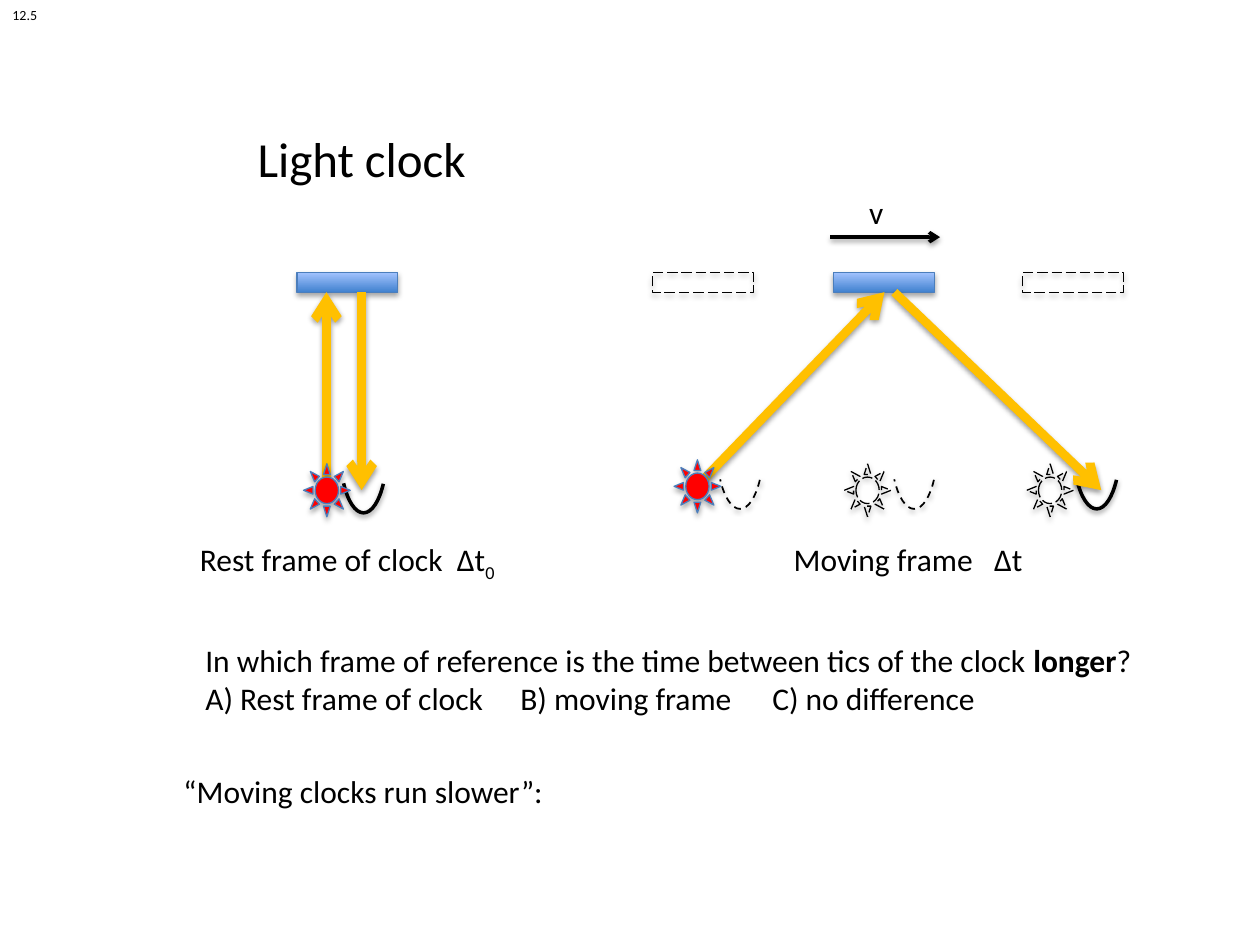
"""Build a slide comparing a light clock at rest with one in motion."""
from dataclasses import dataclass

from lxml import etree
from pptx import Presentation
from pptx.dml.color import RGBColor
from pptx.enum.dml import MSO_LINE
from pptx.enum.shapes import MSO_CONNECTOR, MSO_SHAPE
from pptx.enum.text import MSO_ANCHOR, MSO_AUTO_SIZE, PP_ALIGN
from pptx.oxml.ns import qn
from pptx.util import Cm, Pt

RECT, ARC, SUN = MSO_SHAPE.RECTANGLE, MSO_SHAPE.ARC, MSO_SHAPE.SUN
DASH, LONG = MSO_LINE.DASH, MSO_LINE.LONG_DASH
LINE = MSO_CONNECTOR.STRAIGHT
MID, TOP = MSO_ANCHOR.MIDDLE, MSO_ANCHOR.TOP
FIT, FIXED = MSO_AUTO_SIZE.SHAPE_TO_FIT_TEXT, MSO_AUTO_SIZE.NONE
LEFT, CENTER = PP_ALIGN.LEFT, PP_ALIGN.CENTER


@dataclass(frozen=True)
class Theme:
    font: str = "Calibri"
    black: RGBColor = RGBColor(0, 0, 0)
    gold: RGBColor = RGBColor(0xFF, 0xC0, 0x00)
    red: RGBColor = RGBColor(0xFF, 0x00, 0x00)
    edge: RGBColor = RGBColor(0x4B, 0x7E, 0xBC)
    deep: RGBColor = RGBColor(0x3F, 0x80, 0xCE)
    pale: RGBColor = RGBColor(0xA4, 0xC4, 0xFF)
    head: int = 28
    body: int = 18
    small: int = 8


theme = Theme()
deck = Presentation()
deck.slide_width, deck.slide_height = Cm(25.4), Cm(19.05)
slide = deck.slides.add_slide(deck.slide_layouts[6])
shapes = slide.shapes


def finish(item, color, width, dash=None, alpha=35, drop=1.8):
    item.line.color.rgb = color
    item.line.width = Pt(width)
    if dash:
        item.line.dash_style = dash
    props = item._element.spPr
    glow = etree.SubElement(props, qn("a:effectLst"))
    shade = etree.SubElement(
        glow, qn("a:outerShdw"), blurRad=str(Pt(3.1)), dist=str(Pt(drop)),
        dir="5400000", rotWithShape="0")
    tint = etree.SubElement(shade, qn("a:srgbClr"), val=str(theme.black))
    etree.SubElement(tint, qn("a:alpha"), val=str(alpha * 1000))


def write(box, paras, size=theme.body, align=LEFT, anchor=TOP, fit=FIT, wrap=False):
    frame = shapes.add_textbox(*map(Cm, box)).text_frame
    frame.word_wrap, frame.auto_size, frame.vertical_anchor = wrap, fit, anchor
    for i, runs in enumerate(paras):
        para = frame.add_paragraph() if i else frame.paragraphs[0]
        para.alignment = align
        for text, style in runs:
            run = para.add_run()
            run.text = text
            run.font.name, run.font.size = theme.font, Pt(size)
            run.font.color.rgb = theme.black
            run.font.bold = style == "bold"
            if style == "sub":
                run._r.get_or_add_rPr().set("baseline", "-25000")


write((4.93, 1.6, 4.72, 3.18), [[("Light clock", "")]], theme.head, CENTER, MID, FIXED)

for x, solid in ((5.99, True), (16.81, True), (13.16, False), (20.62, False)):
    plate = shapes.add_shape(RECT, Cm(x), Cm(5.49), Cm(2.03), Cm(0.41))
    if solid:
        plate.fill.gradient()
        plate.fill.gradient_angle = 90
        for stop, pos, color in zip(
                plate.fill.gradient_stops, (0, 1), (theme.deep, theme.pale)):
            stop.position, stop.color.rgb = pos, color
        finish(plate, theme.edge, 0.75)
    else:
        plate.fill.background()
        finish(plate, theme.black, 0.75, LONG)

for x, y, width, dash in (
        (6.86, 7.85, 2, None), (21.64, 7.77, 2, None),
        (17.96, 7.77, 1, DASH), (14.45, 7.77, 1, DASH)):
    dish = shapes.add_shape(ARC, Cm(x), Cm(y), Cm(0.94), Cm(2.49))
    dish.adjustments[0], dish.adjustments[1] = 35.304, 73.005
    dish.fill.background()
    finish(dish, theme.black, width, dash, 38, 1.6)

for ends, color, width in (
        ((6.58, 9.88, 6.58, 5.89), theme.gold, 5),
        ((7.29, 5.89, 7.29, 9.88), theme.gold, 5),
        ((14.05, 9.8, 17.83, 5.89), theme.gold, 5),
        ((18.03, 5.89, 22.2, 9.88), theme.gold, 5),
        ((16.74, 4.78, 18.95, 4.78), theme.black, 2)):
    ray = shapes.add_connector(LINE, *map(Cm, ends))
    finish(ray, color, width, None, 38, 1.6)
    etree.SubElement(ray.line._get_or_add_ln(), qn("a:tailEnd"), type="arrow")

for x, y, lit in (
        (6.12, 9.35, True), (13.59, 9.27, True),
        (17.02, 9.35, False), (20.7, 9.35, False)):
    lamp = shapes.add_shape(SUN, Cm(x), Cm(y), Cm(0.94), Cm(1.07))
    if lit:
        lamp.fill.solid()
        lamp.fill.fore_color.rgb = theme.red
        finish(lamp, theme.edge, 0.75)
    else:
        lamp.fill.background()
        finish(lamp, theme.black, 0.75, LONG)

write((3.78, 10.77, 7.77, 1.02), [[("Rest frame of clock  Δt", ""), ("0", "sub")]], wrap=True)
write((15.75, 10.77, 5.89, 1.02), [[("Moving frame   Δt", "")]], wrap=True)
write((3.89, 12.8, 19.38, 1.8), [
    [("In which frame of reference is the time between tics of the clock ", ""),
     ("longer", "bold"), ("?", "")],
    [("A) Rest frame of clock\tB) moving frame\tC) no difference", "")]])
write((3.45, 15.44, 8.13, 1.02), [[("“Moving clocks run slower”:", "")]])
write((17.27, 3.76, 1.78, 1.02), [[("v", "")]], wrap=True)
write((0, 0, 1.02, 0.61), [[("12.5", "")]], theme.small)

deck.save("out.pptx")
